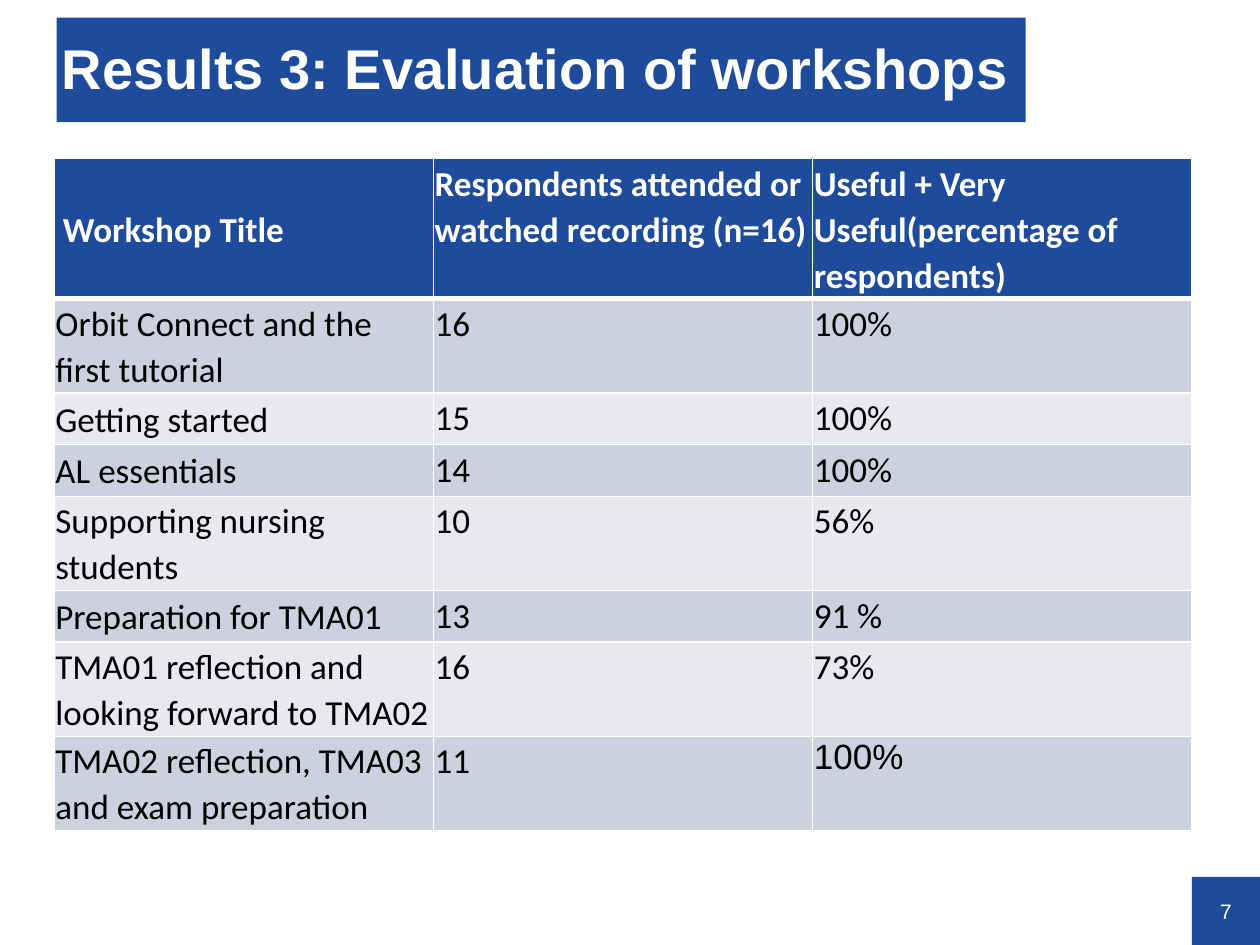
from lxml.etree import SubElement
from pptx import Presentation
from pptx.dml.color import RGBColor
from pptx.enum.shapes import MSO_SHAPE
from pptx.enum.text import MSO_ANCHOR, PP_ALIGN
from pptx.oxml.ns import qn
from pptx.util import Inches, Pt

COLORS = {
    "blue": "1E4B9B",
    "white": "FFFFFF",
    "black": "000000",
    "dark_band": "CDD0DE",
    "light_band": "E8E9EF",
}

HEADINGS = (
    "Workshop Title",
    "Respondents attended or watched recording (n=16)",
    "Useful + Very Useful(percentage of respondents)",
)
WORKSHOPS = (
    ("Orbit Connect and the first tutorial", "16", "100%"),
    ("Getting started", "15", "100%"),
    ("AL essentials", "14", "100%"),
    ("Supporting nursing students", "10", "56%"),
    ("Preparation for TMA01", "13", "91 %"),
    ("TMA01 reflection and looking forward to TMA02", "16", "73%"),
    ("TMA02 reflection, TMA03 and exam preparation", "11", "100%"),
)


def color(name):
    """Return the named colour."""
    return RGBColor.from_string(COLORS[name])


def set_font(paragraph, family, size, color_name, bold=False):
    """Set the font of a whole paragraph."""
    font = paragraph.font
    font.name = family
    font.size = Pt(size)
    font.bold = bold
    font.color.rgb = color(color_name)


def set_margins(target, left, top, right, bottom):
    """Set the inner margins of a text frame or cell in inches."""
    target.margin_left = Inches(left)
    target.margin_top = Inches(top)
    target.margin_right = Inches(right)
    target.margin_bottom = Inches(bottom)


def add_blue_box(slide, box, text, size, alignment, margins, bold=False):
    """Add a blue rectangle with white text and return its paragraph."""
    shape = slide.shapes.add_shape(MSO_SHAPE.RECTANGLE, *map(Inches, box))
    shape.shadow.inherit = False
    shape.fill.solid()
    shape.fill.fore_color.rgb = color("blue")
    shape.line.fill.background()
    frame = shape.text_frame
    frame.word_wrap = True
    frame.vertical_anchor = MSO_ANCHOR.MIDDLE
    set_margins(frame, *margins)
    paragraph = frame.paragraphs[0]
    paragraph.text = text
    paragraph.alignment = alignment
    set_font(paragraph, "Arial", size, "white", bold)
    return paragraph


def add_title(slide, box):
    """Add the title bar."""
    paragraph = add_blue_box(
        slide, box, "Results 3: Evaluation of workshops", 32,
        PP_ALIGN.LEFT, (0.04, 0.02, 0, 0), bold=True,
    )
    paragraph.line_spacing = 0.9


def add_page_number(slide, box):
    """Add the page number square."""
    add_blue_box(slide, box, "7", 12, PP_ALIGN.CENTER, (0, 0, 0, 0))


def set_borders(cell, widths):
    """Draw white cell borders, given each side's width in points."""
    properties = cell._tc.get_or_add_tcPr()
    for index, (side, width) in enumerate(widths.items()):
        line = properties.makeelement(qn(f"a:{side}"), {"w": str(Pt(width))})
        fill = SubElement(line, qn("a:solidFill"))
        SubElement(fill, qn("a:srgbClr"), val=COLORS["white"])
        properties.insert(index, line)


def fill_cell(cell, text, row, column):
    """Write and style one cell of the workshop table."""
    header = row == 0
    fill_name = "blue" if header else "dark_band" if row % 2 else "light_band"
    cell.fill.solid()
    cell.fill.fore_color.rgb = color(fill_name)
    set_borders(cell, {
        "lnL": 1, "lnR": 1, "lnT": 3 if row == 1 else 1, "lnB": 3 if header else 1,
    })
    left = 0.07 if header and column == 0 else 0.01
    set_margins(cell, left, 0.01, 0.01, 0.01)
    cell.vertical_anchor = MSO_ANCHOR.MIDDLE if column == 0 else MSO_ANCHOR.TOP
    paragraph = cell.text_frame.paragraphs[0]
    paragraph.text = text
    last_cell = row == len(WORKSHOPS) and column == len(HEADINGS) - 1
    if not last_cell:
        paragraph.line_spacing = 1.07
        paragraph.space_after = Pt(12)
    set_font(paragraph, "Arial" if last_cell else "Calibri", 20,
             "white" if header else "black", header)


def add_workshop_table(slide, box):
    """Add the table of workshops, attendance and usefulness."""
    rows = (HEADINGS, *WORKSHOPS)
    frame = slide.shapes.add_table(len(rows), len(HEADINGS), *map(Inches, box))
    table = frame.table
    for row_index, values in enumerate(rows):
        table.rows[row_index].height = Inches(0.41)
        for column_index, text in enumerate(values):
            fill_cell(table.cell(row_index, column_index), text, row_index, column_index)
    frame.height = Inches(box[3])


def main():
    """Build and save the presentation."""
    presentation = Presentation()
    presentation.slide_width = Inches(10)
    presentation.slide_height = Inches(7.5)
    slide = presentation.slides.add_slide(presentation.slide_layouts[6])
    add_page_number(slide, (9.46, 6.96, 0.54, 0.54))
    add_title(slide, (0.45, 0.14, 7.69, 0.83))
    add_workshop_table(slide, (0.43, 1.26, 9.03, 5.24))
    presentation.save("out.pptx")


if __name__ == "__main__":
    main()
